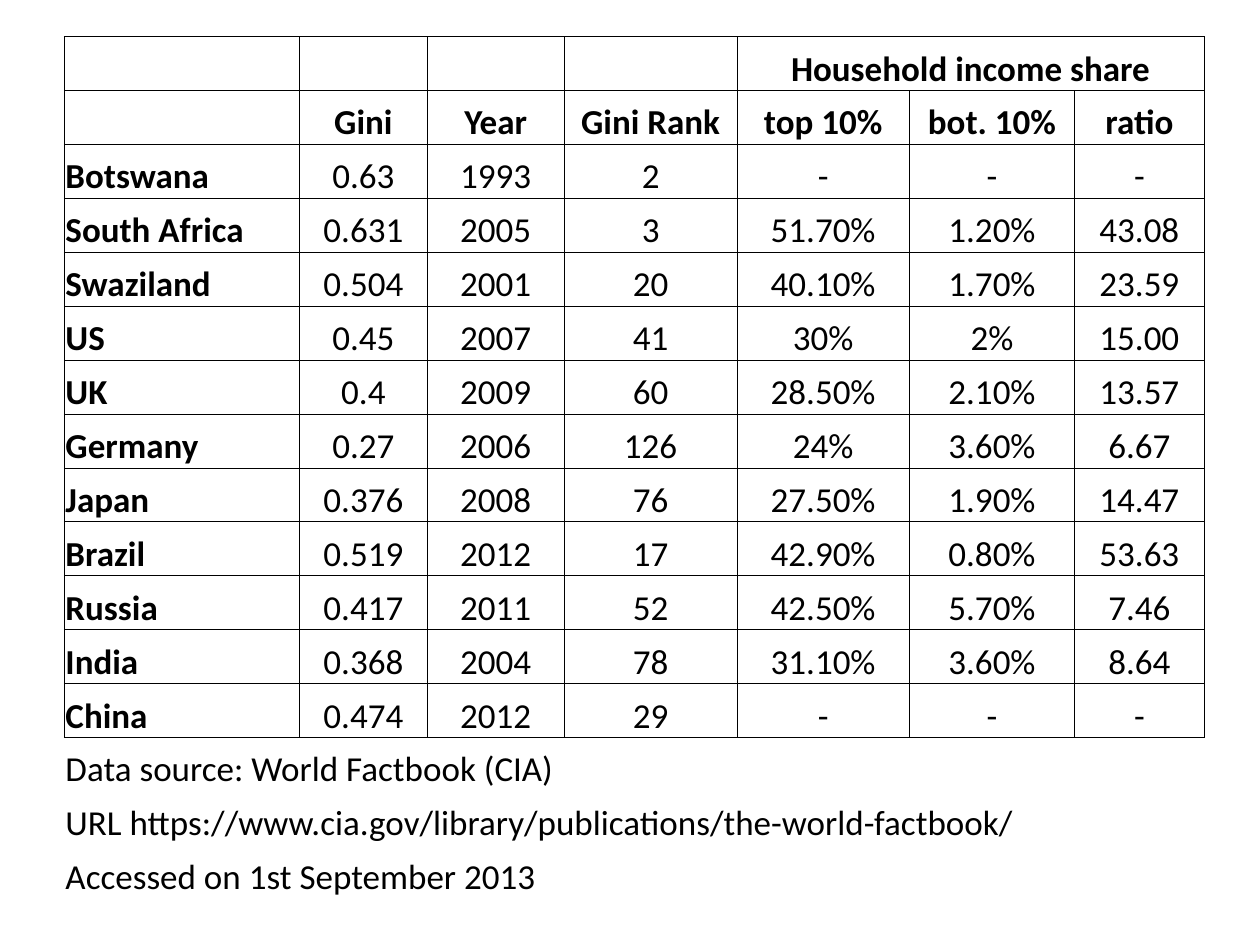
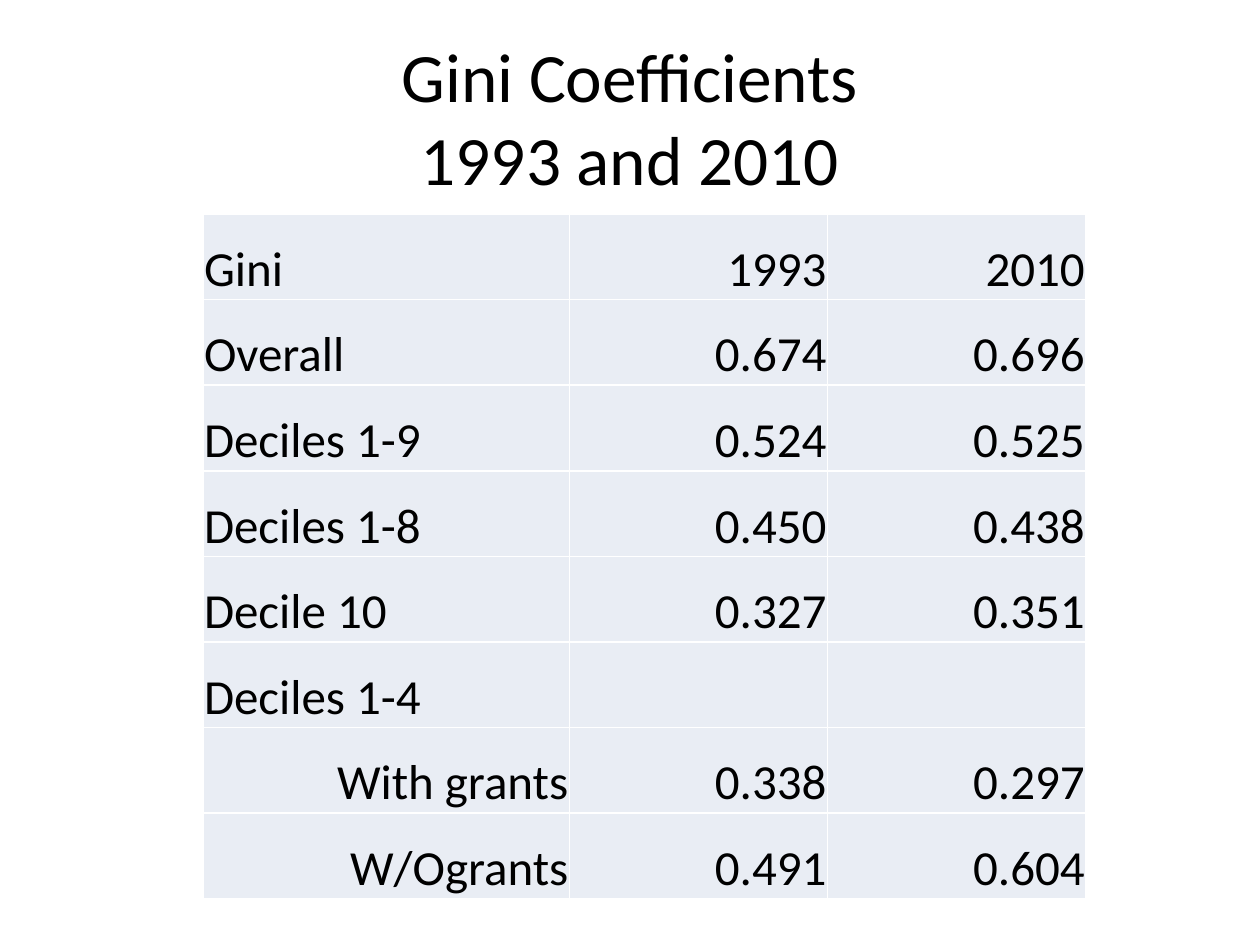
from lxml import etree
from pptx import Presentation
from pptx.dml.color import RGBColor
from pptx.enum.text import MSO_ANCHOR as Anchor, PP_ALIGN as Align
from pptx.oxml.ns import qn
from pptx.util import Inches, Pt

# Content
COUNTRY_HEADINGS = [
    ("", "", "", "", "Household income share", "", ""),
    ("", "Gini", "Year", "Gini Rank", "top 10%", "bot. 10%", "ratio"),
]
COUNTRIES = [
    ("Botswana", "0.63", "1993", "2", "-", "-", "-"),
    ("South Africa", "0.631", "2005", "3", "51.70%", "1.20%", "43.08"),
    ("Swaziland", "0.504", "2001", "20", "40.10%", "1.70%", "23.59"),
    ("US", "0.45", "2007", "41", "30%", "2%", "15.00"),
    ("UK", "0.4", "2009", "60", "28.50%", "2.10%", "13.57"),
    ("Germany", "0.27", "2006", "126", "24%", "3.60%", "6.67"),
    ("Japan", "0.376", "2008", "76", "27.50%", "1.90%", "14.47"),
    ("Brazil", "0.519", "2012", "17", "42.90%", "0.80%", "53.63"),
    ("Russia", "0.417", "2011", "52", "42.50%", "5.70%", "7.46"),
    ("India", "0.368", "2004", "78", "31.10%", "3.60%", "8.64"),
    ("China", "0.474", "2012", "29", "-", "-", "-"),
]
# Source notes: text and number of columns spanned
NOTES = [
    ("Data source: World Factbook (CIA)", 4),
    ("URL https://www.cia.gov/library/publications/the-world-factbook/", 7),
    ("Accessed on 1st September 2013", 4),
]
GINI_TITLE = "Gini Coefficients\n1993 and 2010"
GINI_ROWS = [
    ("Gini", "1993", "2010"),
    ("Overall", "0.674", "0.696"),
    ("Deciles 1-9", "0.524", "0.525"),
    ("Deciles 1-8", "0.450", "0.438"),
    ("Decile 10", "0.327", "0.351"),
    ("Deciles 1-4", "", ""),
    ("With grants", "0.338", "0.297"),
    ("W/Ogrants", "0.491", "0.604"),
]
INDENTED = {"With grants", "W/Ogrants"}

# Shared look
FONT = "Calibri"
BLACK = RGBColor(0x00, 0x00, 0x00)
WHITE = RGBColor(0xFF, 0xFF, 0xFF)
PALE_BLUE = RGBColor(0xE9, 0xED, 0xF4)
COUNTRY_WIDTHS = [1.87, 1.01, 1.09, 1.37, 1.37, 1.31, 1.03]
GINI_WIDTHS = [2.91, 2.05, 2.05]
SIDES = ("L", "R", "T", "B")


def write_text(frame, text, size=20, bold=False, align=Align.LEFT):
    para = frame.paragraphs[0]
    para.text = text
    para.alignment = align
    para.font.size = Pt(size)
    for span in para.runs:
        span.font.name = FONT
        span.font.size = Pt(size)
        span.font.bold = bold
        span.font.color.rgb = BLACK


def set_borders(cell, color, width, sides=SIDES):
    """Draw the named sides and clear the others."""
    properties = cell._tc.get_or_add_tcPr()
    for position, side in enumerate(SIDES):
        line = etree.Element(qn(f"a:ln{side}"), w=str(Pt(width)))
        if side in sides:
            fill = etree.SubElement(line, qn("a:solidFill"))
            etree.SubElement(fill, qn("a:srgbClr"), val=str(color))
        else:
            etree.SubElement(line, qn("a:noFill"))
        properties.insert(position, line)


def format_cell(cell, text, fill=None, border=BLACK, width=0.5, sides=SIDES, **text_format):
    cell.margin_left = cell.margin_right = cell.margin_top = Inches(0.01)
    cell.margin_bottom = 0
    cell.vertical_anchor = Anchor.BOTTOM
    write_text(cell.text_frame, text, **text_format)
    set_borders(cell, border, width, sides)
    if fill is None:
        cell.fill.background()
    else:
        cell.fill.solid()
        cell.fill.fore_color.rgb = fill


def add_plain_table(page, row_count, widths, left, top, height):
    table = page.shapes.add_table(row_count, len(widths), Inches(left), Inches(top),
                                  Inches(sum(widths)), Inches(height)).table
    table.first_row = table.horz_banding = False
    for column, width in zip(table.columns, widths):
        column.width = Inches(width)
    for row in table.rows:
        row.height = Inches(height / row_count)
    return table


def build_country_page(page):
    body = COUNTRY_HEADINGS + COUNTRIES
    table = add_plain_table(page, len(body) + len(NOTES), COUNTRY_WIDTHS, 0.51, 0.29, 6.85)

    # Headings and countries
    for r, row in enumerate(body):
        for c, text in enumerate(row):
            format_cell(table.cell(r, c), text,
                        bold=c == 0 or r < len(COUNTRY_HEADINGS),
                        align=Align.CENTER if c else Align.LEFT)
    table.cell(0, 4).merge(table.cell(0, 6))

    # Source notes, open below the last country
    for r, (note, columns) in enumerate(NOTES, len(body)):
        for c in range(len(COUNTRY_WIDTHS)):
            format_cell(table.cell(r, c), "" if c else note,
                        sides=("T",) if r == len(body) else ())
        table.cell(r, 0).merge(table.cell(r, columns - 1))


def build_gini_page(page):
    # Title
    box = page.shapes.add_textbox(Inches(0.5), Inches(0.3), Inches(9), Inches(1.25))
    box.text_frame.word_wrap = True
    box.text_frame.vertical_anchor = Anchor.MIDDLE
    write_text(box.text_frame, GINI_TITLE, size=39.6, align=Align.CENTER)

    # Coefficients
    table = add_plain_table(page, len(GINI_ROWS), GINI_WIDTHS, 1.61, 1.7, 5.43)
    for r, row in enumerate(GINI_ROWS):
        for c, text in enumerate(row):
            format_cell(table.cell(r, c), text, fill=PALE_BLUE, border=WHITE, width=1, size=28,
                        align=Align.RIGHT if c or text in INDENTED else Align.LEFT)


def main():
    deck = Presentation()
    deck.slide_width, deck.slide_height = Inches(10), Inches(7.5)
    for build_page in (build_country_page, build_gini_page):
        build_page(deck.slides.add_slide(deck.slide_layouts[6]))
    deck.save("out.pptx")


if __name__ == "__main__":
    main()
